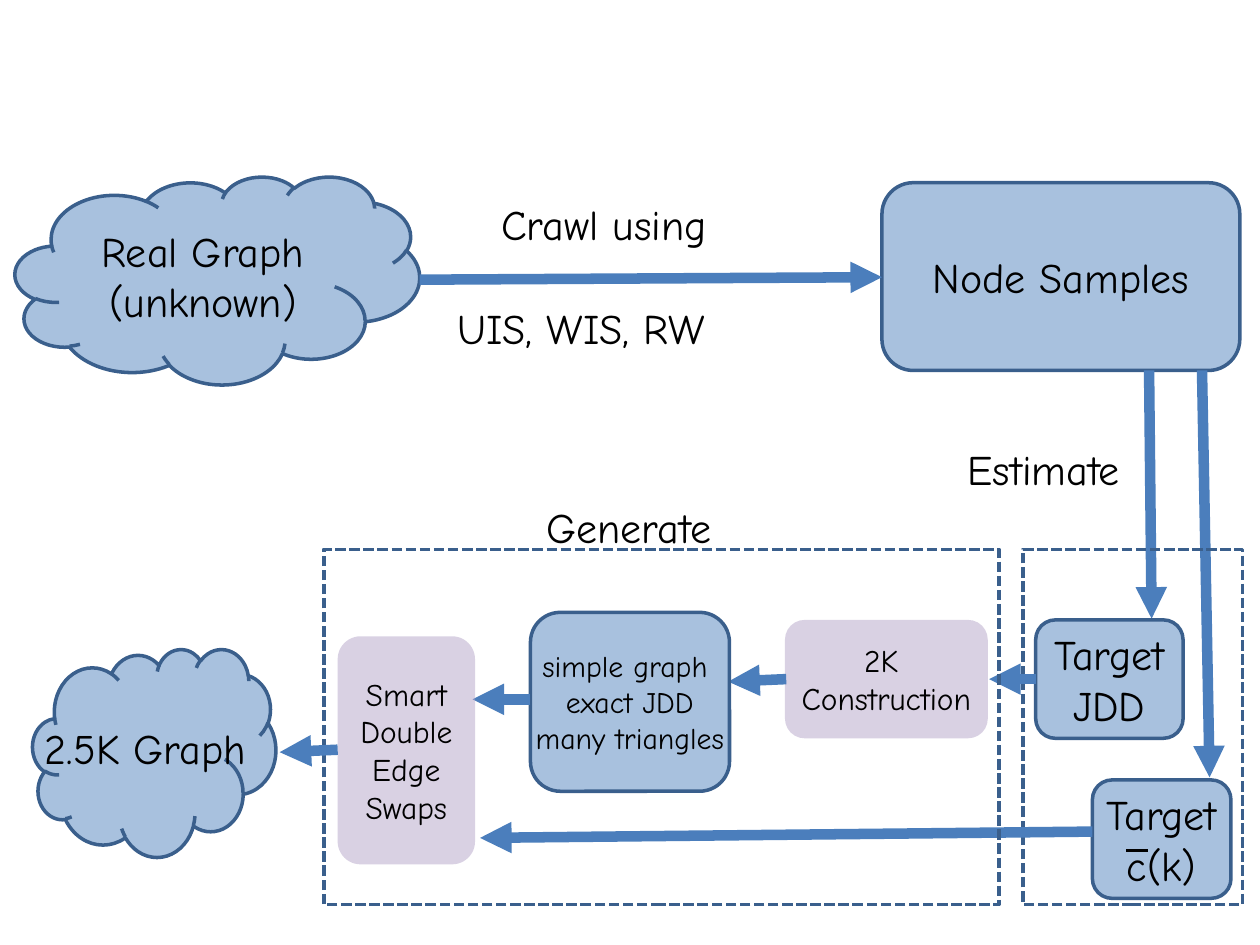
import dataclasses

import pptx
import pptx.dml.color
import pptx.enum.dml
import pptx.enum.shapes
import pptx.enum.text
import pptx.oxml
import pptx.oxml.ns
import pptx.util
from pptx.util import Inches

KIND = pptx.enum.shapes.MSO_SHAPE
ALIGN = pptx.enum.text.PP_ALIGN
ANCHOR = pptx.enum.text.MSO_ANCHOR


@dataclasses.dataclass(frozen=True)
class Theme:
    font: str = "Comic Neue"
    ink: str = "000000"
    data: str = "4F81BD"
    step: str = "B3A2C7"
    edge: str = "3A5F8C"
    arrow: str = "4B7EBC"
    alpha: int = 49
    large: int = 24
    mid: int = 18
    small: int = 17
    rim: float = 2
    thick: float = 6
    thin: float = 1.5


THEME = Theme()


def rgb(code):
    return pptx.dml.color.RGBColor.from_string(code)


def tag(name, **attrs):
    """Make an empty DrawingML element."""
    node = pptx.oxml.parse_xml(f"<a:{name} {pptx.oxml.ns.nsdecls('a')}/>")
    for key, value in attrs.items():
        node.set(key, str(value))
    return node


def write(frame, lines, size, align):
    for i, line in enumerate(lines):
        para = frame.paragraphs[0] if i == 0 else frame.add_paragraph()
        para.alignment = align
        run = para.add_run()
        run.text = line
        run.font.name = THEME.font
        run.font.size = pptx.util.Pt(size)
        run.font.color.rgb = rgb(THEME.ink)


def stroke(line, color, width):
    line.color.rgb = rgb(color)
    line.width = pptx.util.Pt(width)


class Region:
    """A box on the slide; parts are placed from its top left corner."""

    def __init__(self, slide, box):
        self.shapes = slide.shapes
        self.left, self.top, self.width, self.height = box

    def spot(self, x, y):
        return Inches(self.left + x), Inches(self.top + y)

    def node(self, kind, x, y, w, h, lines, size=THEME.large, color=THEME.data):
        shape = self.shapes.add_shape(kind, *self.spot(x, y), Inches(w), Inches(h))
        shape.shadow.inherit = False
        shape.fill.solid()
        shape.fill.fore_color.rgb = rgb(color)
        tint = shape.fill._xPr.find(".//" + pptx.oxml.ns.qn("a:srgbClr"))
        tint.append(tag("alpha", val=THEME.alpha * 1000))
        if color == THEME.data:
            stroke(shape.line, THEME.edge, THEME.rim)
        else:
            shape.line.fill.background()
        frame = shape.text_frame
        frame.word_wrap = False
        frame.vertical_anchor = ANCHOR.MIDDLE
        write(frame, lines, size, ALIGN.CENTER)

    def label(self, x, y, w, text, align=ALIGN.LEFT):
        box = self.shapes.add_textbox(*self.spot(x, y), Inches(w), Inches(0.5))
        box.text_frame.word_wrap = True
        write(box.text_frame, [text], THEME.large, align)

    def rule(self, start, end, color=THEME.ink, width=THEME.thin):
        line = self.shapes.add_connector(
            pptx.enum.shapes.MSO_CONNECTOR.STRAIGHT,
            *self.spot(*start), *self.spot(*end))
        stroke(line.line, color, width)
        line._element.spPr.append(tag("effectLst"))
        return line

    def arrow(self, start, end):
        line = self.rule(start, end, THEME.arrow, THEME.thick)
        line.line._get_or_add_ln().append(tag("tailEnd", type="triangle"))

    def border(self):
        shape = self.shapes.add_shape(
            KIND.RECTANGLE, *self.spot(0, 0), Inches(self.width), Inches(self.height))
        shape.shadow.inherit = False
        shape.fill.background()
        stroke(shape.line, THEME.edge, THEME.rim)
        shape.line.dash_style = pptx.enum.dml.MSO_LINE.SQUARE_DOT
        shape.line._get_or_add_ln().find(
            pptx.oxml.ns.qn("a:prstDash")).set("val", "sysDash")


def crawl(slide, box):
    area = Region(slide, box)
    area.node(KIND.CLOUD, 0, 0, 3.21, 1.65, ["Real Graph", "(unknown)"])
    area.node(KIND.ROUNDED_RECTANGLE, 6.88, 0.05, 2.84, 1.49, ["Node Samples"])
    area.arrow((3.21, 0.82), (6.88, 0.8))
    area.label(3.76, 0.13, 2.77, "Crawl using")
    area.label(3.41, 0.95, 2.96, "UIS, WIS, RW")


def estimate(slide, box):
    """Targets, with the arrows that lead to them from the samples above."""
    area = Region(slide, box)
    area.arrow((1, -1.42), (1.02, 0.55))
    area.arrow((1.42, -1.42), (1.48, 1.81))
    area.label(-0.54, -0.89, 1.98, "Estimate")
    area.node(KIND.ROUNDED_RECTANGLE, 0.1, 0.56, 1.17, 0.94, ["Target", "JDD"])
    area.node(KIND.ROUNDED_RECTANGLE, 0.55, 1.83, 1.1, 0.94, ["Target", "c(k)"])
    area.rule((0.82, 2.39), (0.99, 2.39))
    area.border()


def generate(slide, box):
    """Steps from right to left, with the arrows from the targets."""
    area = Region(slide, box)
    area.arrow((5.65, 1.03), (5.28, 1.03))
    area.arrow((6.1, 2.24), (1.24, 2.29))
    area.node(KIND.ROUNDED_RECTANGLE, 3.66, 0.56, 1.61, 0.94,
              ["2K ", "Construction"], THEME.mid, THEME.step)
    area.arrow((3.67, 1.03), (3.21, 1.05))
    area.node(KIND.ROUNDED_RECTANGLE, 1.64, 0.5, 1.58, 1.42,
              ["simple graph ", " exact JDD ", "many triangles"], THEME.small)
    area.arrow((1.64, 1.19), (1.18, 1.19))
    area.node(KIND.ROUNDED_RECTANGLE, 0.11, 0.69, 1.09, 1.81,
              ["Smart", "Double", "Edge", "Swaps"], THEME.mid, THEME.step)
    area.border()
    area.label(0.88, -0.43, 3.08, "Generate", ALIGN.CENTER)


def result(slide, box):
    area = Region(slide, box)
    area.node(KIND.CLOUD, 0, 0, area.width, area.height, ["2.5K Graph"])
    area.arrow((2.42, 0.8), (1.96, 0.82))


def main():
    deck = pptx.Presentation()
    deck.slide_width, deck.slide_height = Inches(10), Inches(7.5)
    slide = deck.slides.add_slide(deck.slide_layouts[6])
    crawl(slide, (0.12, 1.4, 9.72, 1.65))
    estimate(slide, (8.12, 4.36, 1.74, 2.82))
    generate(slide, (2.57, 4.36, 5.36, 2.82))
    result(slide, (0.26, 5.15, 1.93, 1.65))
    deck.save("out.pptx")


if __name__ == "__main__":
    main()
